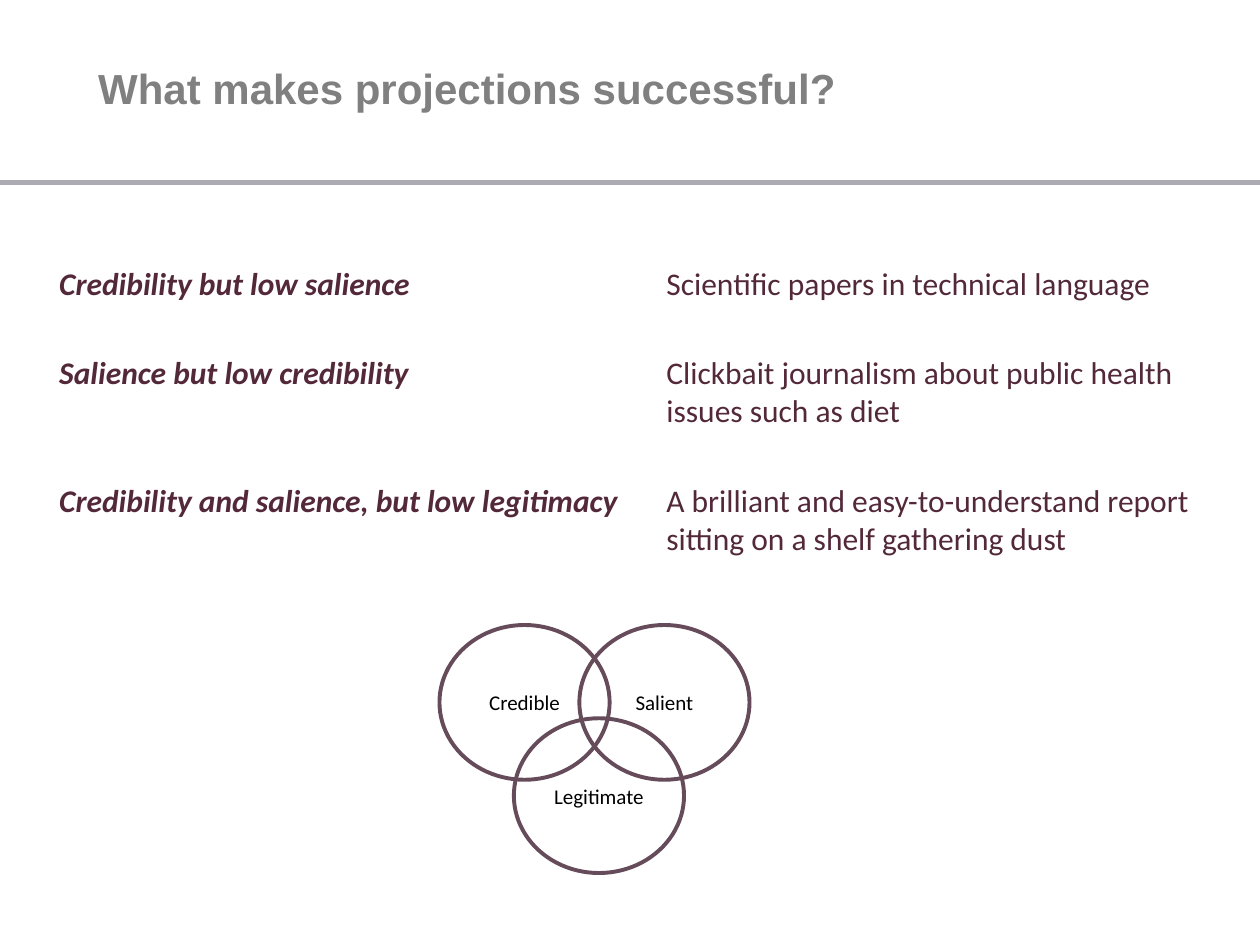
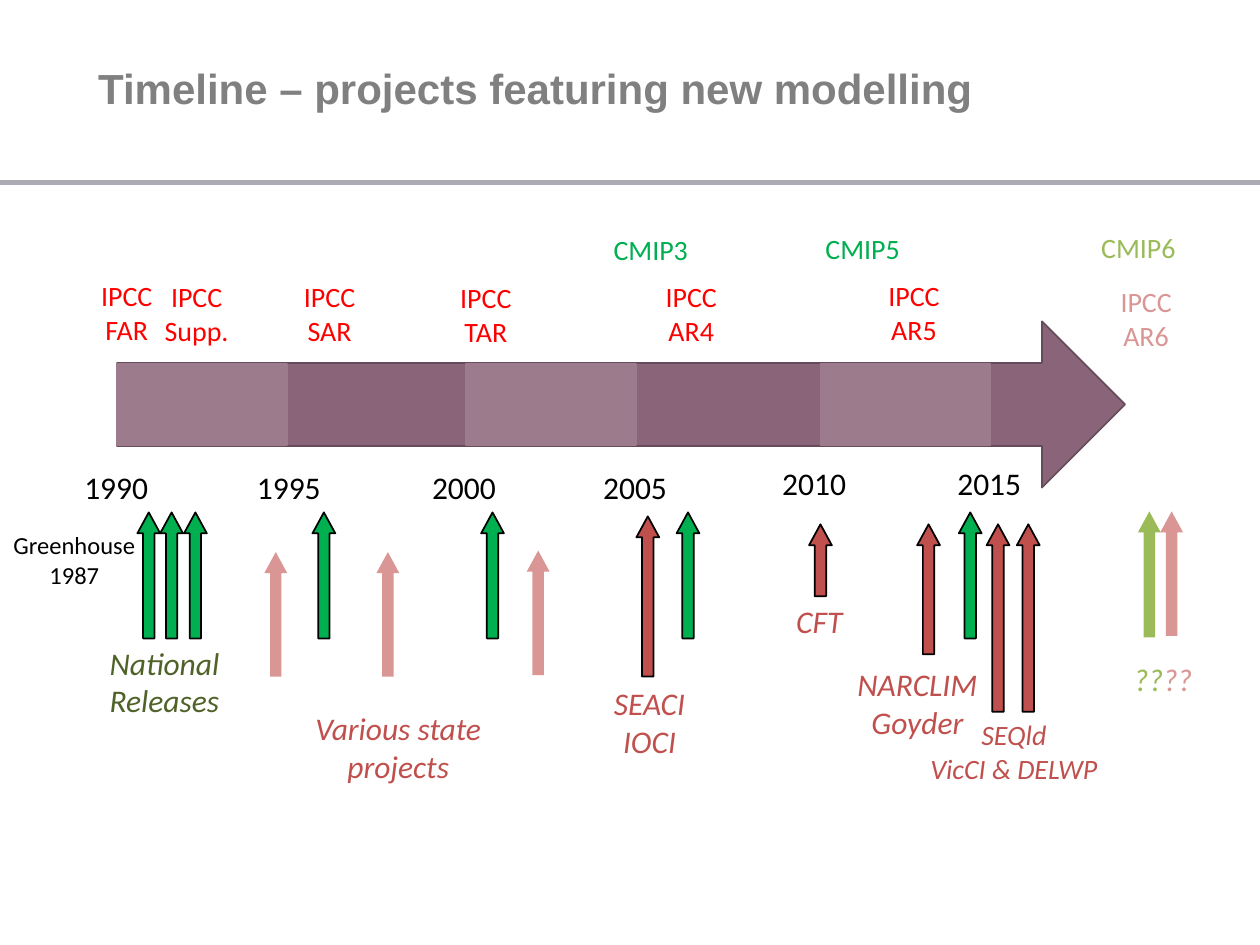
from dataclasses import dataclass

from lxml import etree
from pptx import Presentation
from pptx.dml.color import RGBColor
from pptx.enum.shapes import MSO_SHAPE
from pptx.enum.text import MSO_ANCHOR, PP_ALIGN
from pptx.oxml.ns import qn
from pptx.util import Cm, Pt

RECT, OVAL = MSO_SHAPE.RECTANGLE, MSO_SHAPE.OVAL
RIGHT_ARROW, UP_ARROW = MSO_SHAPE.RIGHT_ARROW, MSO_SHAPE.UP_ARROW
LEFT, CENTER = PP_ALIGN.LEFT, PP_ALIGN.CENTER
TOP, MIDDLE = MSO_ANCHOR.TOP, MSO_ANCHOR.MIDDLE


@dataclass(frozen=True)
class Theme:
    title_font: str = "Arial"
    body_font: str = "Calibri"
    title: str = "808080"
    rule: str = "ACAAB2"
    black: str = "000000"
    white: str = "FFFFFF"
    wine: str = "532939"
    outline: str = "664B5A"
    band_dark: str = "8A6579"
    band_light: str = "9C7C8C"
    ipcc: str = "FF0000"
    green: str = "00B050"
    dark_green: str = "4F6228"
    olive: str = "9BBB59"
    red: str = "C0504D"
    pink: str = "D99694"
    title_size: int = 24
    body_size: int = 18
    label_size: int = 16
    note_size: int = 14
    circle_size: int = 12


T = Theme()

# Slide 1 content
SUCCESS_TITLE = "What makes projections successful?"
EXAMPLES = [  # quality, example, row height
    ("Credibility but low salience",
     "Scientific papers in technical language", 1.79),
    ("Salience but low credibility",
     "Clickbait journalism about public health issues such as diet", 2.57),
    ("Credibility and salience, but low legitimacy",
     "A brilliant and easy-to-understand report sitting on a shelf gathering dust", 1.79),
]
CIRCLES = [("Credible", 8.86, 12.6), ("Salient", 11.68, 12.6), ("Legitimate", 10.36, 14.48)]

# Slide 2 content: text, left, top (and width, height where they vary)
TIMELINE_TITLE = "Timeline – projects featuring new modelling"
LIGHT_BANDS = [2.36, 9.4, 16.54]
YEARS = [("1990", 1.45, 9.32), ("1995", 4.93, 9.32), ("2000", 8.46, 9.32),
         ("2005", 11.91, 9.32), ("2010", 15.52, 9.22), ("2015", 19.05, 9.22)]
REPORTS = [("FAR", 1.73, 5.49, 1.65, T.ipcc), ("Supp.", 3.0, 5.51, 1.93, T.ipcc),
           ("SAR", 5.82, 5.51, 1.65, T.ipcc), ("TAR", 8.97, 5.54, 1.65, T.ipcc),
           ("AR4", 13.11, 5.51, 1.65, T.ipcc), ("AR5", 17.6, 5.49, 1.65, T.ipcc),
           ("AR6", 22.28, 5.61, 1.65, T.pink)]
MODEL_SETS = [("CMIP3", 12.04, 4.57, T.green), ("CMIP5", 16.31, 4.55, T.green),
              ("CMIP6", 21.87, 4.52, T.olive)]
PROJECTS = [  # text, box, colour, alignment, size
    ("National\nReleases", (1.96, 12.85, 3.05, 1.8), T.dark_green, LEFT, T.body_size),
    ("Various state projects", (5.64, 14.17, 4.78, 1.8), T.red, CENTER, T.body_size),
    ("SEACI\nIOCI", (12.04, 13.67, 2.11, 1.8), T.red, CENTER, T.body_size),
    ("CFT", (15.8, 12.01, 1.93, 1.02), T.red, LEFT, T.body_size),
    ("NARCLIM\nGoyder", (17.02, 13.28, 2.95, 1.8), T.red, CENTER, T.body_size),
    ("SEQld\nVicCI & DELWP", (18.19, 14.35, 4.5, 1.63), T.red, CENTER, T.label_size),
    ([[("??", T.olive), ("??", T.pink)]], (22.61, 13.18, 1.91, 1.02), T.olive, LEFT,
     T.body_size),
]
ARROWS = [  # fill, outline, [(left, top, height)]
    (T.green, T.black, [(x, 10.33, 2.54) for x in
                        (2.77, 3.23, 3.71, 6.3, 9.7, 13.64, 19.33)]),
    (T.red, T.black, [(12.83, 10.41, 3.23), (16.31, 10.57, 1.45), (18.49, 10.57, 2.62),
                      (19.89, 10.57, 3.78), (20.5, 10.57, 3.78)]),
    (T.olive, None, [(22.94, 10.31, 2.54)]),
    (T.pink, None, [(5.33, 11.13, 2.51), (7.59, 11.13, 2.51), (10.62, 11.1, 2.51),
                    (23.39, 10.31, 2.51)]),
]


def rgb(color):
    return RGBColor.from_string(color)


def write(tf, text, size=T.body_size, color=T.black, font=T.body_font, bold=False,
          italic=False, align=LEFT, anchor=TOP, wrap=True, spacing=None):
    """Fill a text frame; text is a string or paragraphs of (text, colour) runs."""
    tf.word_wrap = wrap
    tf.vertical_anchor = anchor
    if isinstance(text, str):
        text = [[(line, color)] for line in text.split("\n")]
    for i, runs in enumerate(text):
        p = tf.add_paragraph() if i else tf.paragraphs[0]
        p.alignment = align
        if spacing:
            p.line_spacing = spacing
        for words, run_color in runs:
            r = p.add_run()
            r.text = words
            r.font.name, r.font.size = font, Pt(size)
            r.font.bold, r.font.italic = bold, italic
            r.font.color.rgb = rgb(run_color)


def add_text(s, text, box, **fmt):
    write(s.shapes.add_textbox(*map(Cm, box)).text_frame, text, **fmt)


def add_shape(s, kind, box, fill=None, line=None, width=1):
    sp = s.shapes.add_shape(kind, *map(Cm, box))
    sp.shadow.inherit = False
    if fill:
        sp.fill.solid()
        sp.fill.fore_color.rgb = rgb(fill)
    else:
        sp.fill.background()
    if line:
        sp.line.color.rgb = rgb(line)
        sp.line.width = Pt(width)
    else:
        sp.line.fill.background()
    return sp


def set_borders(cell, color, bottom):
    """White rules on all sides; the bottom one has its own width."""
    tc_pr = cell._tc.get_or_add_tcPr()
    sides = [("a:lnL", 1), ("a:lnR", 1), ("a:lnT", 1), ("a:lnB", bottom)]
    for i, (tag, width) in enumerate(sides):
        ln = etree.Element(qn(tag), w=str(Pt(width)))
        fill = etree.SubElement(ln, qn("a:solidFill"))
        etree.SubElement(fill, qn("a:srgbClr"), val=color)
        tc_pr.insert(i, ln)


def new_slide(prs, title):
    """Blank slide with the shared rule and title."""
    s = prs.slides.add_slide(prs.slide_layouts[6])
    add_shape(s, RECT, (0, 3.63, 25.4, 0.1), T.rule)
    add_text(s, title, (1.73, 0, 21.89, 3.68), size=T.title_size, color=T.title,
             font=T.title_font, bold=True, anchor=MIDDLE, spacing=0.9)
    return s


def build_success(prs):
    s = new_slide(prs, SUCCESS_TITLE)

    # Overlapping circles
    for text, x, y in CIRCLES:
        sp = add_shape(s, OVAL, (x, y, 3.43, 3.12), line=T.outline, width=2.25)
        write(sp.text_frame, text, size=T.circle_size, align=CENTER, anchor=MIDDLE,
              wrap=False)

    # Table of examples
    height = sum(row[2] for row in EXAMPLES)
    table = s.shapes.add_table(len(EXAMPLES), 2, Cm(0.94), Cm(5.23), Cm(23.47),
                               Cm(height)).table
    table.horz_banding = False
    for column, width in zip(table.columns, (12.24, 11.23)):
        column.width = Cm(width)
    for i, (*texts, row_height) in enumerate(EXAMPLES):
        table.rows[i].height = Cm(row_height)
        for j, text in enumerate(texts):
            cell = table.cell(i, j)
            cell.fill.background()
            set_borders(cell, T.white, bottom=1 if i else 3)
            write(cell.text_frame, text, color=T.wine, bold=j == 0, italic=j == 0)


def build_timeline(prs):
    s = new_slide(prs, TIMELINE_TITLE)

    # Time arrow with alternating five-year bands
    add_shape(s, RIGHT_ARROW, (2.36, 6.48, 20.32, 3.35), T.band_dark, T.outline)
    for x in LIGHT_BANDS:
        add_shape(s, RECT, (x, 7.34, 3.43, 1.63), T.band_light, T.band_light)

    # Years, reports and model sets
    add_text(s, "Greenhouse\n1987", (0, 10.57, 3, 1.45), size=T.note_size, align=CENTER,
             wrap=False)
    for text, x, y in YEARS:
        add_text(s, text, (x, y, 1.93, 1.02))
    for text, x, y, width, color in REPORTS:
        add_text(s, "IPCC\n" + text, (x, y, width, 1.63), size=T.label_size, color=color,
                 align=CENTER)
    for text, x, y, color in MODEL_SETS:
        add_text(s, text, (x, y, 2.16, 0.94), size=T.label_size, color=color, align=CENTER)

    # Project arrows and names
    for fill, line, places in ARROWS:
        for x, y, height in places:
            sp = add_shape(s, UP_ARROW, (x, y, 0.46, height), fill, line)
            sp.adjustments[0], sp.adjustments[1] = 0.5, 0.92
    for text, box, color, align, size in PROJECTS:
        add_text(s, text, box, color=color, align=align, size=size, italic=True)


def main():
    prs = Presentation()
    prs.slide_width, prs.slide_height = Cm(25.4), Cm(19.05)
    build_success(prs)
    build_timeline(prs)
    prs.save("out.pptx")


if __name__ == "__main__":
    main()
